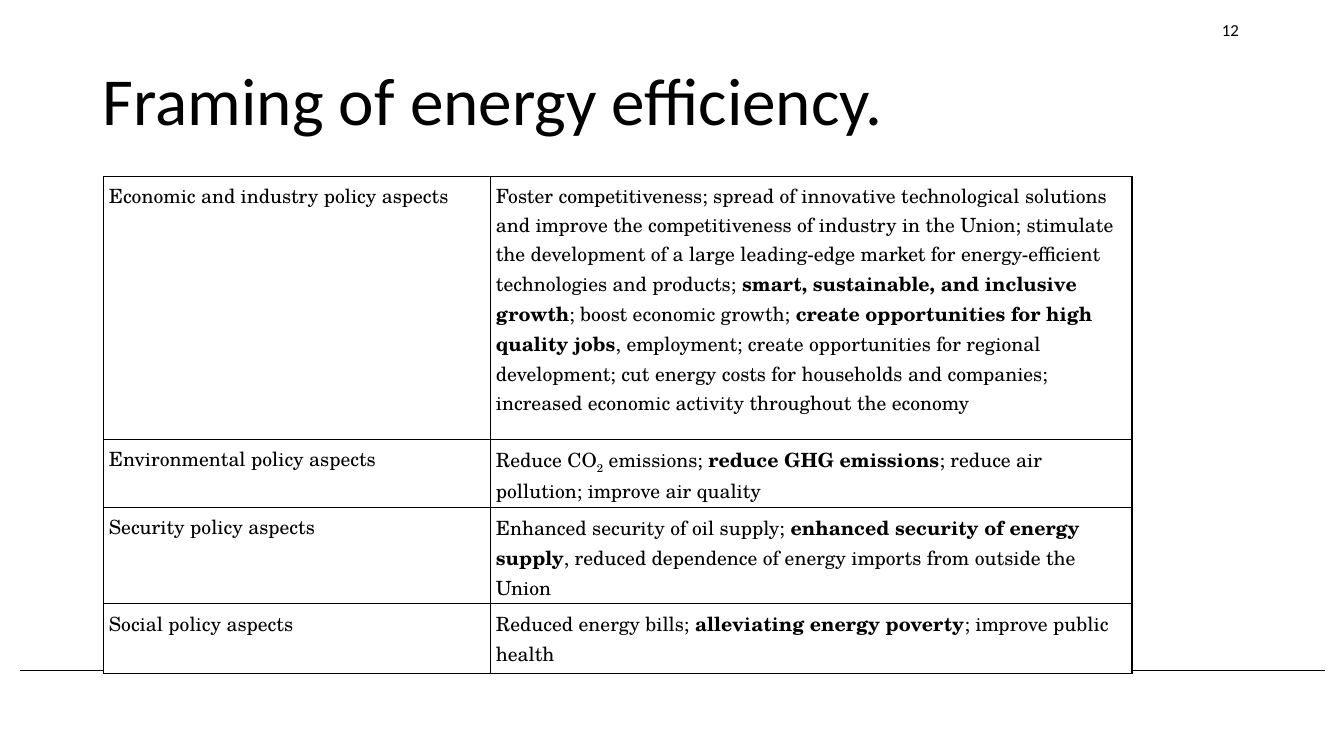
from dataclasses import dataclass

from lxml.etree import SubElement
from pptx import Presentation
from pptx.dml.color import RGBColor
from pptx.enum.shapes import MSO_CONNECTOR
from pptx.enum.text import MSO_ANCHOR, MSO_AUTO_SIZE, PP_ALIGN
from pptx.oxml.ns import qn
from pptx.slide import Slide
from pptx.table import _Cell
from pptx.text.text import TextFrame, _Paragraph
from pptx.util import Inches, Length, Pt


@dataclass(frozen=True)
class Theme:
    ink: RGBColor = RGBColor(0, 0, 0)
    paper: RGBColor = RGBColor(255, 255, 255)
    heading_font: str = "Calibri"
    table_font: str = "TeX Gyre Schola"
    title_size: Length = Pt(48)
    table_size: Length = Pt(14)
    number_size: Length = Pt(12)
    rule_width: Length = Pt(0.5)
    border_width: Length = Pt(1)


@dataclass(frozen=True)
class Span:
    text: str
    bold: bool = False
    baseline: int = 0


@dataclass(frozen=True)
class PolicyRow:
    aspect: str
    framing: tuple[Span, ...]
    height: float
    bottom_margin: float = 0.2


THEME = Theme()
SLIDE_COLUMNS, SLIDE_ROWS = 133.33, 75
TABLE_COLUMNS = (38.4, 63.6)
CELL_MARGIN = 0.5

POLICY_ROWS = (
    PolicyRow("Economic and industry policy aspects", (
        Span("Foster competitiveness; spread of innovative technological solutions and improve "
             "the competitiveness of industry in the Union; stimulate the development of a large "
             "leading-edge market for energy-efficient technologies and products; "),
        Span("smart, sustainable, and inclusive growth", bold=True),
        Span("; boost economic growth; "),
        Span("create opportunities for high quality jobs", bold=True),
        Span(", employment; create opportunities for regional development; cut energy costs for "
             "households and companies; increased economic activity throughout the economy"),
    ), 26.1),
    PolicyRow("Environmental policy aspects", (
        Span("Reduce CO"),
        Span("2", baseline=-25000),
        Span(" emissions; "),
        Span("reduce GHG emissions", bold=True),
        Span("; reduce air pollution; improve air quality"),
    ), 5.8),
    PolicyRow("Security policy aspects", (
        Span("Enhanced security of oil supply; "),
        Span("enhanced security of energy supply", bold=True),
        Span(", reduced dependence of energy imports from outside the Union"),
    ), 7.1),
    PolicyRow("Social policy aspects", (
        Span("Reduced energy bills; "),
        Span("alleviating energy poverty", bold=True),
        Span("; improve public health"),
    ), 4.9, bottom_margin=CELL_MARGIN),
)


def grid(steps: float) -> Length:
    """Turn grid columns or rows, each a tenth of an inch, into a length."""
    return Inches(steps / 10)


def apply_format(target: object, values: dict[str, object]) -> None:
    for name, value in values.items():
        setattr(target, name, value)


def add_span(para: _Paragraph, span: Span, font_name: str, size: Length) -> None:
    run = para.add_run()
    run.text = span.text
    apply_format(run.font, {"name": font_name, "size": size, "bold": span.bold})
    run.font.color.rgb = THEME.ink
    if span.baseline:
        run.font._element.set("baseline", str(span.baseline))


def format_frame(frame: TextFrame, values: dict[str, object]) -> None:
    apply_format(frame, {"word_wrap": True, "auto_size": MSO_AUTO_SIZE.NONE, **values})


def add_base_rule(slide: Slide) -> None:
    rule = slide.shapes.add_connector(
        MSO_CONNECTOR.STRAIGHT, grid(2), grid(66.5), grid(131.4), grid(66.5))
    rule.line.color.rgb = THEME.ink
    rule.line.width = THEME.rule_width
    SubElement(rule._element.spPr, qn("a:effectLst"))


def set_title(slide: Slide, text: str) -> None:
    title = slide.shapes.title
    apply_format(title, {"left": grid(9.2), "top": grid(5),
                         "width": grid(102), "height": grid(9.4)})
    format_frame(title.text_frame, {"vertical_anchor": MSO_ANCHOR.BOTTOM})
    para = title.text_frame.paragraphs[0]
    apply_format(para, {"alignment": PP_ALIGN.LEFT, "line_spacing": 0.9})
    add_span(para, Span(text), THEME.heading_font, THEME.title_size)


def add_borders(cell: _Cell) -> None:
    properties = cell._tc.get_or_add_tcPr()
    for position, side in enumerate(("a:lnL", "a:lnR", "a:lnT", "a:lnB")):
        border = properties.makeelement(qn(side), {"w": str(THEME.border_width)})
        fill = SubElement(border, qn("a:solidFill"))
        SubElement(fill, qn("a:srgbClr"), val=str(THEME.ink))
        properties.insert(position, border)


def fill_cell(cell: _Cell, spans: tuple[Span, ...], bottom_margin: float) -> None:
    margin = grid(CELL_MARGIN)
    apply_format(cell, {"margin_left": margin, "margin_right": margin, "margin_top": margin,
                        "margin_bottom": grid(bottom_margin),
                        "vertical_anchor": MSO_ANCHOR.TOP})
    cell.fill.solid()
    cell.fill.fore_color.rgb = THEME.paper
    add_borders(cell)
    for span in spans:
        add_span(cell.text_frame.paragraphs[0], span, THEME.table_font, THEME.table_size)


def add_policy_table(slide: Slide) -> None:
    height = sum(row.height for row in POLICY_ROWS)
    table = slide.shapes.add_table(
        len(POLICY_ROWS), len(TABLE_COLUMNS), grid(10.3), grid(17.5),
        grid(sum(TABLE_COLUMNS)), grid(height)).table
    apply_format(table, {"first_row": False, "horz_banding": False})
    for column, width in zip(table.columns, TABLE_COLUMNS):
        column.width = grid(width)
    for row, policy in zip(table.rows, POLICY_ROWS):
        row.height = grid(policy.height)
        for cell, spans in zip(row.cells, ((Span(policy.aspect),), policy.framing)):
            fill_cell(cell, spans, policy.bottom_margin)


def add_page_number(slide: Slide, number: str) -> None:
    box = slide.shapes.add_textbox(grid(118.2), 0, grid(4.7), grid(3.9))
    format_frame(box.text_frame, {"margin_left": 0, "margin_right": 0,
                                  "margin_top": grid(2), "margin_bottom": 0})
    para = box.text_frame.paragraphs[0]
    para.alignment = PP_ALIGN.RIGHT
    add_span(para, Span(number), THEME.heading_font, THEME.number_size)


def main() -> None:
    deck = Presentation()
    apply_format(deck, {"slide_width": grid(SLIDE_COLUMNS), "slide_height": grid(SLIDE_ROWS)})
    title_only = deck.slide_layouts.get_by_name("Title Only")
    page = deck.slides.add_slide(title_only)
    add_base_rule(page)
    set_title(page, "Framing of energy efficiency.")
    add_policy_table(page)
    add_page_number(page, "12")
    deck.save("out.pptx")


if __name__ == "__main__":
    main()
